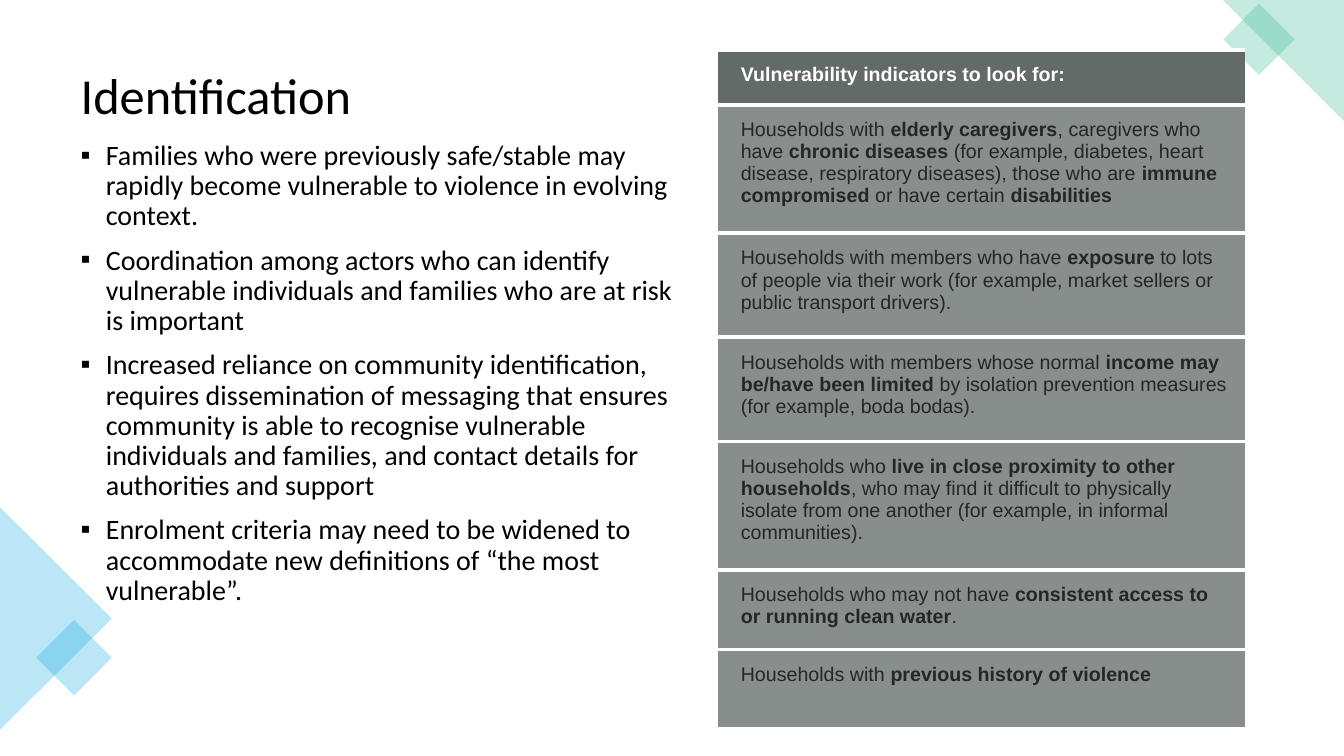
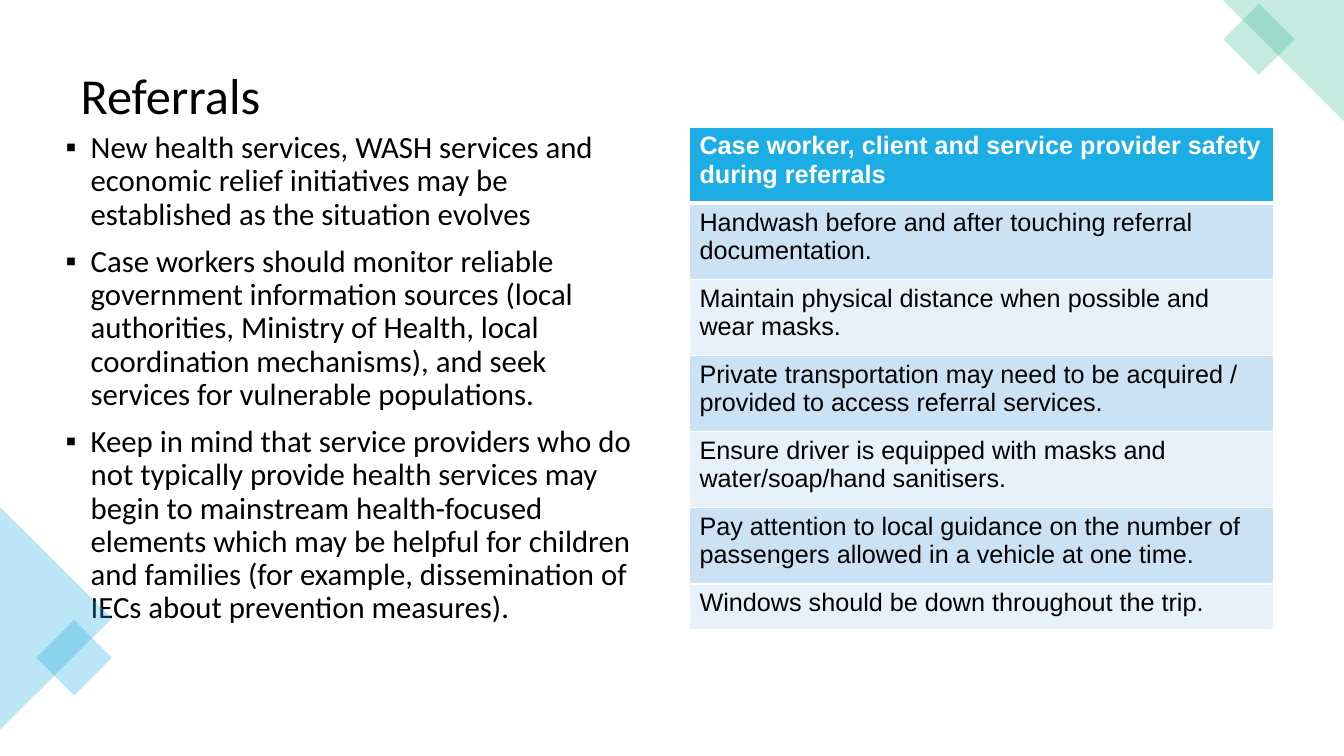
"""Build two slides on identifying and referring vulnerable families."""
from lxml import etree
from pptx import Presentation
from pptx.dml.color import RGBColor
from pptx.enum.shapes import MSO_SHAPE
from pptx.enum.text import MSO_ANCHOR, MSO_AUTO_SIZE, PP_ALIGN
from pptx.oxml.ns import qn
from pptx.util import Pt

TRIANGLE, SQUARE = MSO_SHAPE.ISOSCELES_TRIANGLE, MSO_SHAPE.RECTANGLE
MIDDLE, TOP = MSO_ANCHOR.MIDDLE, MSO_ANCHOR.TOP
LEFT, NO_FIT = PP_ALIGN.LEFT, MSO_AUTO_SIZE.NONE

WHITE, BLACK, DARK = "FFFFFF", "000000", "262626"
BLUE, GREEN, SLATE, GREY = "1CADE4", "42BA97", "636B68", "878E8B"
PALE, LIGHT = "E7F1FA", "CBE2F5"
HEAD_FONT, CELL_FONT = "Calibri", "Arial"
INSETS = (7.2, 3.6, 7.2, 3.6)
TITLE_BOX = (50.4, 25.2, 391.7, 89.3)

DECOR = [
    (TRIANGLE, (-39.6, 401.8, 159.1, 79.9), 90, BLUE, 0.5),
    (SQUARE, (33.8, 450.7, 38.2, 38.2), 45, BLUE, None),
    (TRIANGLE, (873.4, 0, 86.6, 86.6), 270, GREEN, 1),
    (SQUARE, (881.3, 10.1, 36, 36), 45, GREEN, None),
]

SLIDES = [
    {
        "title": "Identification",
        "box": (50.4, 97.2, 442.1, 400.3),
        "size": 20,
        "points": [
            "Families who were previously safe/stable may rapidly become vulnerable to violence in evolving context.",
            "Coordination among actors who can identify vulnerable individuals and families who are at risk is important",
            "Increased reliance on community identification, requires dissemination of messaging that ensures "
            "community is able to recognise vulnerable individuals and families, and contact details for "
            "authorities and support",
            "Enrolment criteria may need to be widened to accommodate new definitions of “the most vulnerable”.",
        ],
        "table": {
            "at": (512.8, 35.5, 376.4),
            "size": 14,
            "ink": DARK,
            "insets": (16.4, 10.1, 10.1, 10.1),
            "side": 0,
            "rule": 3,
            "head": (SLATE, 70),
            "bands": [(GREY, 15), (GREY, 30)],
            "rows": [
                (39.5, "Vulnerability indicators to look for:"),
                (91.5, "Households with *elderly caregivers*, caregivers who have *chronic diseases *(for example, "
                       "diabetes, heart disease, respiratory diseases), those who are *immune compromised *or have "
                       "certain *disabilities*"),
                (74.5, "Households with members who have *exposure* to lots of people via their work (for example, "
                       "market sellers or public transport drivers)."),
                (74.5, "Households with members whose normal *income may be/have been limited *by isolation "
                       "prevention measures (for example, boda bodas)."),
                (91.5, "Households who *live in close proximity to other households*, who may find it difficult to "
                       "physically isolate from one another (for example, in informal communities)."),
                (57, "Households who may not have *consistent access to or running clean water*."),
                (57, "Households with *previous history of violence*"),
            ],
            "last": (GREY, 15),
        },
    },
    {
        "title": "Referrals",
        "box": (39.6, 90.7, 427.7, 378),
        "size": 22,
        "points": [
            "New health services, WASH services and economic relief initiatives may be established as the "
            "situation evolves",
            "Case workers should monitor reliable government information sources (local authorities, Ministry of "
            "Health, local coordination mechanisms), and seek services for vulnerable populations.",
            "Keep in mind that service providers who do not typically provide health services may begin to "
            "mainstream health-focused elements which may be helpful for children and families (for example, "
            "dissemination of IECs about prevention measures).",
        ],
        "table": {
            "at": (492.5, 90.7, 416.9),
            "size": 18,
            "ink": BLACK,
            "insets": INSETS,
            "side": 1,
            "rule": 1,
            "head": (BLUE, 100),
            "bands": [(LIGHT, 100), (PALE, 100)],
            "rows": [
                (54.4, "Case worker, client and service provider safety during referrals"),
                (54.4, "Handwash before and after touching referral documentation."),
                (54.4, "Maintain physical distance when possible and wear masks."),
                (54.4, "Private transportation may need to be acquired / provided to access referral services."),
                (54.4, "Ensure driver is equipped with masks and water/soap/hand sanitisers."),
                (54.4, "Pay attention to local guidance on the number of passengers allowed in a vehicle at one time."),
                (32.4, "Windows should be down throughout the trip."),
            ],
            "last": (PALE, 100),
        },
    },
]


def rgb(code):
    return RGBColor.from_string(code)


def add(parent, tag, **attrs):
    return etree.SubElement(parent, qn(tag), **attrs)


def paint(fill, code, alpha):
    fill.solid()
    fill.fore_color.rgb = rgb(code)
    if alpha < 100:
        color = fill._xPr.find(".//" + qn("a:srgbClr"))
        add(color, "a:alpha", val=str(alpha * 1000))


def style(para, name, size, ink):
    font = para.font
    font.name, font.size, font.color.rgb = name, Pt(size), rgb(ink)


def inset(item, sizes):
    sides = ("left", "top", "right", "bottom")
    for side, size in zip(sides, sizes):
        setattr(item, "margin_" + side, Pt(size))


def place(shape, box, anchor):
    shape.left, shape.top, shape.width, shape.height = map(Pt, box)
    frame = shape.text_frame
    frame.word_wrap, frame.auto_size = True, NO_FIT
    frame.vertical_anchor = anchor
    inset(frame, INSETS)
    return frame


def add_title(slide, text):
    frame = place(slide.shapes.title, TITLE_BOX, MIDDLE)
    frame.text = text
    para = frame.paragraphs[0]
    para.alignment, para.line_spacing = LEFT, 0.9
    style(para, HEAD_FONT, 36, BLACK)


def add_list(slide, box, size, points):
    frame = place(slide.placeholders[1], box, TOP)
    frame.text = "\n".join(points)
    for num, para in enumerate(frame.paragraphs):
        para.line_spacing = 0.9
        para.space_before = Pt(10 if num else 0)
        props = para._p.get_or_add_pPr()
        props.set("marL", str(Pt(18)))
        props.set("indent", str(Pt(-18)))
        color = add(props, "a:buClr")
        add(color, "a:srgbClr", val=BLACK)
        add(props, "a:buFont", typeface=CELL_FONT)
        add(props, "a:buChar", char="▪")
        style(para, HEAD_FONT, size, BLACK)


def add_decor(slide):
    for kind, box, turn, code, peak in DECOR:
        shape = slide.shapes.add_shape(kind, *map(Pt, box))
        shape.rotation = turn
        shape.shadow.inherit = False
        shape.line.fill.background()
        paint(shape.fill, code, 30)
        if peak is not None:
            shape.adjustments[0] = peak


def edge(cell, side, width):
    line = add(cell._tc.get_or_add_tcPr(), "a:ln" + side, w=str(Pt(width)))
    if width:
        add(add(line, "a:solidFill"), "a:srgbClr", val=WHITE)
    else:
        add(line, "a:noFill")


def add_grid(slide, data):
    rows = data["rows"]
    left, top, width = data["at"]
    high = sum(row[0] for row in rows)
    box = map(Pt, (left, top, width, high))
    table = slide.shapes.add_table(len(rows), 1, *box).table
    fills = [data["head"]] + [data["bands"][i % 2] for i in range(len(rows) - 2)] + [data["last"]]
    for num, ((tall, text), fill) in enumerate(zip(rows, fills)):
        table.rows[num].height = Pt(tall)
        cell = table.cell(num, 0)
        inset(cell, data["insets"])
        rule = data["rule"]
        widths = (data["side"], data["side"], 3 if num == 1 else rule, 3 if num == 0 else rule)
        for side, size in zip("LRTB", widths):
            edge(cell, side, size)
        paint(cell.fill, *fill)
        para = cell.text_frame.paragraphs[0]
        style(para, CELL_FONT, data["size"], data["ink"] if num else WHITE)
        for part, words in enumerate(text.split("*")):
            if words:
                run = para.add_run()
                run.text = words
                run.font.bold = num == 0 or part % 2 == 1


def main():
    deck = Presentation()
    deck.slide_width, deck.slide_height = Pt(960), Pt(540)
    for data in SLIDES:
        slide = deck.slides.add_slide(deck.slide_layouts[1])
        add_title(slide, data["title"])
        add_list(slide, data["box"], data["size"], data["points"])
        add_decor(slide)
        add_grid(slide, data["table"])
    deck.save("out.pptx")


if __name__ == "__main__":
    main()
